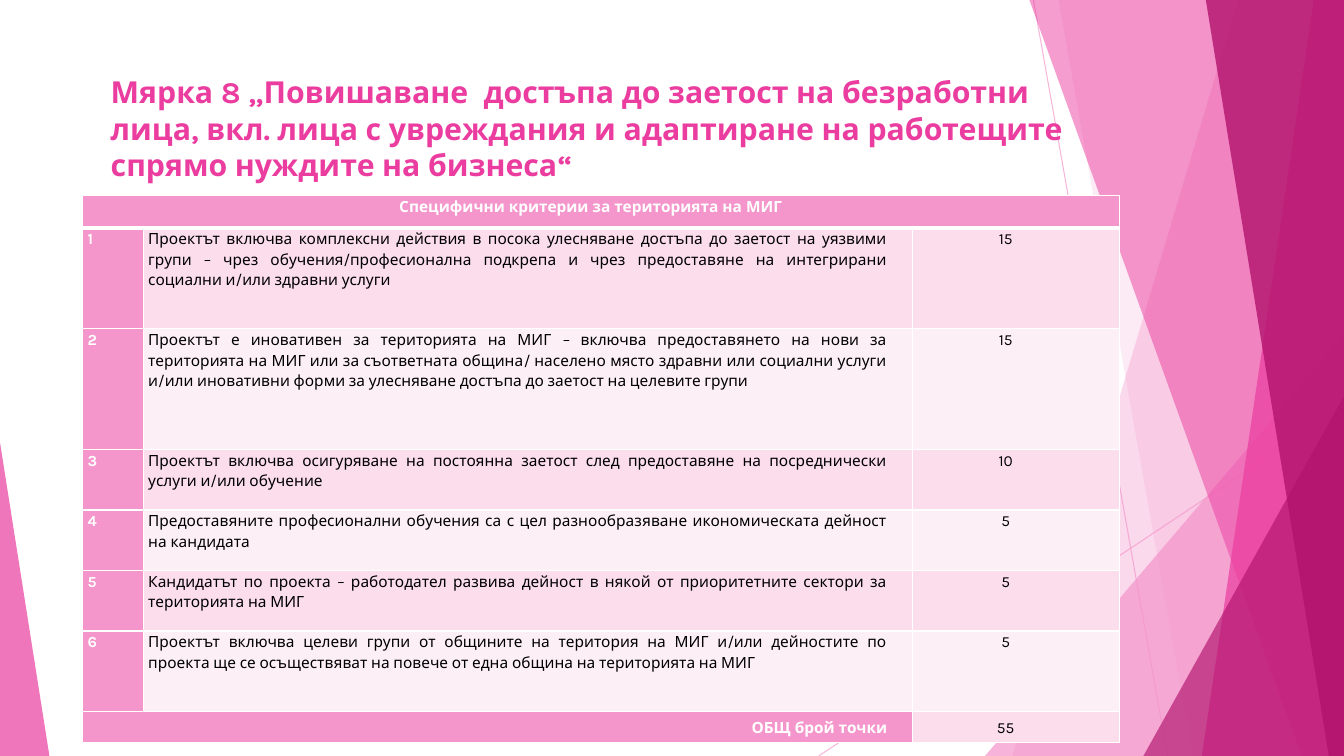
from dataclasses import dataclass

from lxml.etree import SubElement as Sub
from pptx import Presentation
from pptx.dml.color import RGBColor as Rgb
from pptx.enum.shapes import MSO_CONNECTOR as Link, MSO_SHAPE as Kind
from pptx.enum.text import MSO_ANCHOR as Anchor, PP_ALIGN as Align
from pptx.oxml.ns import qn
from pptx.util import Inches, Pt


@dataclass(frozen=True)
class Theme:
    """Colours, font and type sizes of the slide."""
    light: str = "F496CB"
    pink: str = "EB3D9F"
    deep: str = "B2136D"
    odd: str = "FBDDEC"
    even: str = "FDEFF6"
    white: str = "FFFFFF"
    black: str = "000000"
    font: str = "Karla"
    head: float = 21.6
    body: float = 11


LOOK = Theme()
WIDE, HIGH = 13.33, 7.5
TITLE = ("Мярка 8 „Повишаване  достъпа до заетост на безработни лица, вкл. лица с "
         "увреждания и адаптиране на работещите спрямо нуждите на бизнеса“")
HEAD = "Специфични критерии за територията на МИГ"
TOTAL = "ОБЩ брой точки"
ITEMS = [
    ("Проектът включва комплексни действия в посока улесняване достъпа до заетост на "
     "уязвими групи – чрез обучения/професионална подкрепа и чрез предоставяне на "
     "интегрирани социални и/или здравни услуги", 15, 1),
    ("Проектът е иновативен за територията на МИГ – включва предоставянето на нови за "
     "територията на МИГ или за съответната община/ населено място здравни или социални "
     "услуги и/или иновативни форми за улесняване достъпа до заетост на целевите групи",
     15, 1.2),
    ("Проектът включва осигуряване на постоянна заетост след предоставяне на "
     "посреднически услуги и/или обучение", 10, 0.6),
    ("Предоставяните професионални обучения са с цел разнообразяване икономическата "
     "дейност на кандидата", 5, 0.6),
    ("Кандидатът по проекта – работодател развива дейност в някой от приоритетните "
     "сектори за територията на МИГ", 5, 0.6),
    ("Проектът включва целеви групи от общините на територия на МИГ и/или дейностите по "
     "проекта ще се осъществяват на повече от една община на територията на МИГ", 5, 0.8),
]


def put(frame, text, size=LOOK.body, color=LOOK.black, bold=False,
        align=Align.LEFT, space=None, right=0):
    """Write one formatted paragraph into a text frame."""
    frame.word_wrap = True
    para = frame.paragraphs[0]
    para.alignment = align
    if space:
        para.line_spacing = space
    if right:
        para._p.get_or_add_pPr().set("marR", str(Inches(right)))
    run = para.add_run()
    run.text = text
    run.font.name, run.font.size, run.font.bold = LOOK.font, Pt(size), bold
    run.font.color.rgb = Rgb.from_string(color)


def fade(fill, color, alpha):
    """Give a fill a solid colour of the given opacity in percent."""
    fill.solid()
    fill.fore_color.rgb = Rgb.from_string(color)
    tone = next(fill._xPr.iter(qn("a:srgbClr")))
    Sub(tone, qn("a:alpha"), val=str(alpha * 1000))


def paint(shape, color, alpha):
    """Fill a shape and take away its line and shadow."""
    shape.shadow.inherit = False
    shape.line.fill.background()
    fade(shape.fill, color, alpha)


def ray(slide, box, start, end):
    """Draw a thin line between two points of the box."""
    left, top = box[:2]
    line = slide.shapes.add_connector(
        Link.STRAIGHT, Inches(left + start[0]), Inches(top + start[1]),
        Inches(left + end[0]), Inches(top + end[1]))
    line.line.width = Pt(0.75)
    fade(line.line.fill, LOOK.light, 70)
    Sub(line._element.spPr, qn("a:effectLst"))


def blade(slide, box, upper, lower, color, alpha):
    """Draw a slanted panel that reaches the right edge of the box."""
    left, top, wide, high = box
    spots = [(Inches(left + x), Inches(top + y)) for x, y in
             ((upper, 0), (wide, 0), (wide, high), (lower, high))]
    form = slide.shapes.build_freeform(*spots[0])
    form.add_line_segments(spots[1:])
    paint(form.convert_to_shape(), color, alpha)


def wedge(slide, box, left, wide, high, tip, color, alpha):
    """Draw a triangle that stands on the lower edge of the box."""
    shape = slide.shapes.add_shape(
        Kind.ISOSCELES_TRIANGLE, Inches(box[0] + left),
        Inches(box[1] + box[3] - high), Inches(wide), Inches(high))
    shape.adjustments[0] = tip
    paint(shape, color, alpha)


def decor(slide, box):
    """Draw the layered pink panels behind the content."""
    ray(slide, box, (10.25, 0), (11.58, HIGH))
    ray(slide, box, (WIDE, 4.03), (8.12, HIGH))
    for draw, *spec_row in (
            (blade, 12.28, 10.04, LOOK.light, 36),
            (blade, 10.5, 11.83, LOOK.light, 20),
            (wedge, 9.77, 3.56, 4.17, 1, LOOK.light, 72),
            (blade, 10.21, 12.91, LOOK.pink, 50),
            (blade, 13.03, 11.92, LOOK.pink, 70),
            (blade, 11.96, 13.18, LOOK.deep, 80),
            (wedge, 11.34, 1.99, 3.57, 1, LOOK.deep, 66),
            (wedge, 0, 0.49, 3.11, 0, LOOK.pink, 70)):
        draw(slide, box, *spec_row)


def title(slide, box):
    """Place the heading."""
    frame = slide.shapes.add_textbox(*map(Inches, box)).text_frame
    put(frame, TITLE, size=LOOK.head, color=LOOK.pink, bold=True)


def dress(cell, color, upper=1, lower=1):
    """Set the margins, white borders and fill of a cell."""
    cell.margin_left = cell.margin_right = Inches(0.05)
    cell.margin_top = cell.margin_bottom = 0
    props = cell._tc.get_or_add_tcPr()
    for side, width in (("L", 1), ("R", 1), ("T", upper), ("B", lower)):
        edge = Sub(props, qn(f"a:ln{side}"), w=str(Pt(width)))
        Sub(Sub(edge, qn("a:solidFill")), qn("a:srgbClr"), val=LOOK.white)
    cell.fill.solid()
    cell.fill.fore_color.rgb = Rgb.from_string(color)


def grid(slide, box):
    """Place the table of criteria and points."""
    highs = [0.32, *(high for _, _, high in ITEMS), 0.31]
    last = len(highs) - 1
    table = slide.shapes.add_table(len(highs), 3, *map(Inches, box)).table
    table.horz_banding = False
    for col, wide in zip(table.columns, (0.6, 7.63, 2.05)):
        col.width = Inches(wide)
    for row, high in enumerate(highs):
        table.rows[row].height = Inches(high)
        band = LOOK.odd if row % 2 else LOOK.even
        for col in range(3):
            strong = row == 0 or col == 0 or (row == last and col < 2)
            dress(table.cell(row, col), LOOK.light if strong else band,
                  upper=3 if row == 1 else 1, lower=1 if row else 3)
    table.cell(0, 0).merge(table.cell(0, 2))
    table.cell(last, 0).merge(table.cell(last, 1))

    def fill(row, col, text, align, **kind):
        put(table.cell(row, col).text_frame, text, align=align,
            space=1.15, right=0.2, **kind)

    mark = dict(color=LOOK.white, bold=True)
    fill(0, 0, HEAD, Align.CENTER, **mark)
    for row, (text, score, _) in enumerate(ITEMS, 1):
        fill(row, 0, str(row), Align.JUSTIFY, **mark)
        fill(row, 1, text, Align.JUSTIFY)
        fill(row, 2, str(score), Align.CENTER)
    fill(last, 0, TOTAL, Align.RIGHT, **mark)
    fill(last, 2, str(sum(score for _, score, _ in ITEMS)), Align.CENTER)
    for col in (0, 2):
        table.cell(last, col).vertical_anchor = Anchor.MIDDLE


def main():
    """Build the slide and save it."""
    deck = Presentation()
    deck.slide_width, deck.slide_height = Inches(WIDE), Inches(HIGH)
    slide = deck.slides.add_slide(deck.slide_layouts[6])
    decor(slide, (0, 0, WIDE, HIGH))
    title(slide, (1, 0.68, 10.14, 1.15))
    grid(slide, (0.82, 1.94, 10.28, 5.43))
    deck.save("out.pptx")


if __name__ == "__main__":
    main()
